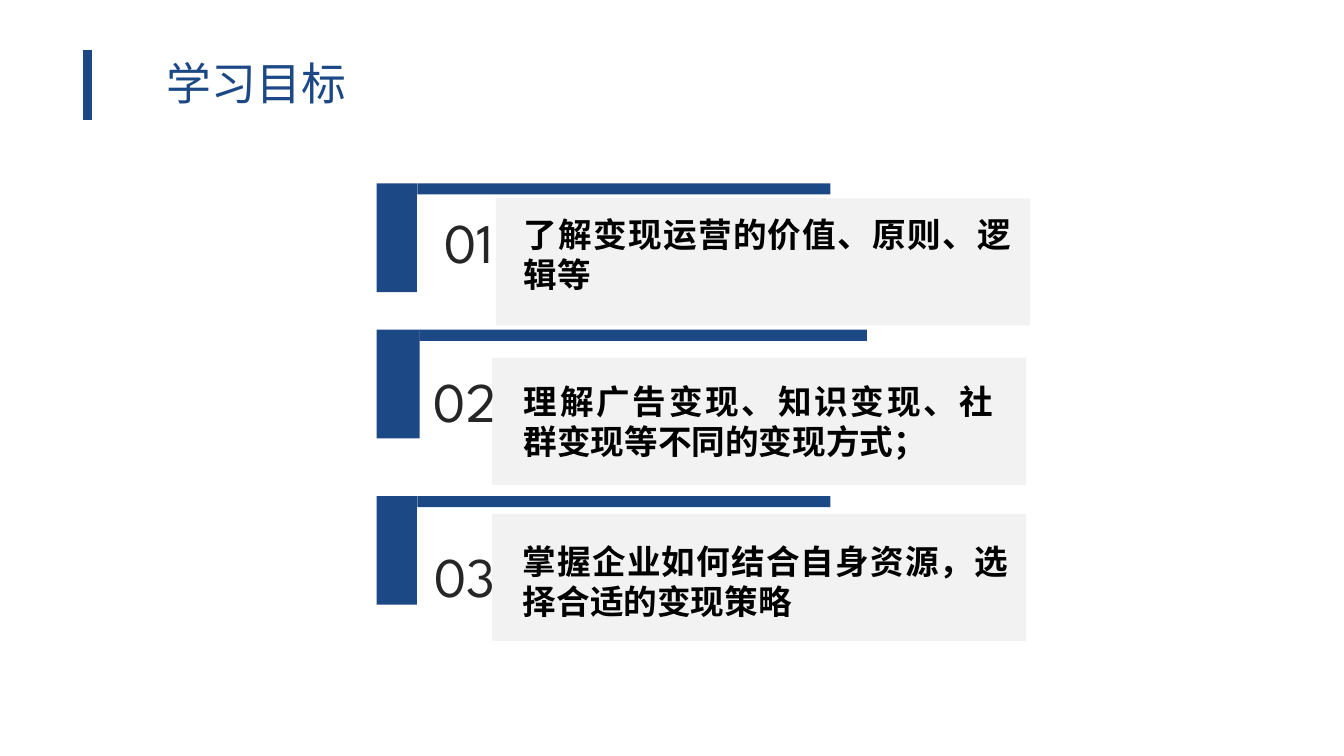
from dataclasses import dataclass

from lxml import etree
from pptx import Presentation
from pptx import util as u
from pptx.dml import color
from pptx.enum import shapes, text
from pptx.oxml import ns

COLORS = {"blue": "1C4885", "panel": "F2F2F2", "number": "262626", "black": "000000"}
CHINESE_FONT = "Noto Sans CJK SC"
POST_LEFT = 9.49
POST_HEIGHT = 2.74
BAR_HEIGHT = 0.28
PANEL_SIZE = (13.46, 3.2)
NUMBER_SIZE = (2.87, 1.96)
GOAL_HEIGHT = 2.31


@dataclass
class Style:
    size: int
    font: str
    color: str
    align: text.PP_ALIGN
    bold: bool = False


@dataclass
class Goal:
    wording: str
    top: float
    post_width: float
    bar_left: float
    bar_width: float
    panel: tuple[float, float]
    number: tuple[float, float]
    body: tuple[float, float]
    body_width: float


TITLE = Style(32, CHINESE_FONT, "blue", text.PP_ALIGN.CENTER)
NUMBER = Style(40, "League Spartan", "number", text.PP_ALIGN.CENTER)
BODY = Style(24, "Calibri", "black", text.PP_ALIGN.JUSTIFY, True)

GOALS = [
    Goal("了解变现运营的价值、原则、逻辑等", 4.62, 1.02, 10.52, 10.41,
         (12.5, 5), (10.39, 5.11), (12.95, 5.26), 12.78),
    Goal("理解广告变现、知识变现、社群变现等不同的变现方式；", 8.31, 1.09, 10.57, 11.28,
         (12.4, 9.02), (10.29, 9.12), (12.95, 9.47), 12.34),
    Goal("掌握企业如何结合自身资源，选择合适的变现策略", 12.5, 1.02, 10.52, 10.41,
         (12.4, 12.95), (10.29, 13.51), (12.93, 13.51), 12.73),
]


def rgb(name: str) -> color.RGBColor:
    return color.RGBColor.from_string(COLORS[name])


def add_block(page, left: float, top: float, width: float, height: float, fill: str) -> None:
    block = page.shapes.add_shape(
        shapes.MSO_SHAPE.RECTANGLE, u.Cm(left), u.Cm(top), u.Cm(width), u.Cm(height))
    block.shadow.inherit = False
    block.fill.solid()
    block.fill.fore_color.rgb = rgb(fill)
    block.line.fill.background()


def add_text(page, wording: str, left: float, top: float, width: float, height: float,
             style: Style) -> None:
    box = page.shapes.add_textbox(u.Cm(left), u.Cm(top), u.Cm(width), u.Cm(height))
    frame = box.text_frame
    frame.word_wrap = True
    frame.auto_size = text.MSO_AUTO_SIZE.SHAPE_TO_FIT_TEXT
    frame.text = wording
    para = frame.paragraphs[0]
    para.alignment = style.align
    span = para.runs[0]
    span.font.size = u.Pt(style.size)
    span.font.bold = style.bold
    span.font.color.rgb = rgb(style.color)
    span.font.name = style.font
    properties = span.font._element
    etree.SubElement(properties, ns.qn("a:ea"), typeface=CHINESE_FONT)


def add_title(page) -> None:
    add_text(page, "学习目标", 2.51, 1.27, 7.9, 1.63, TITLE)
    mark = page.shapes.add_connector(
        shapes.MSO_CONNECTOR.STRAIGHT, u.Cm(2.21), u.Cm(1.27), u.Cm(2.21), u.Cm(3.02))
    mark.line.color.rgb = rgb("blue")
    mark.line.width = u.Pt(6)
    etree.SubElement(mark._element.spPr, ns.qn("a:effectLst"))


def add_goal(page, index: int, goal: Goal) -> None:
    add_block(page, POST_LEFT, goal.top, goal.post_width, POST_HEIGHT, "blue")
    add_block(page, goal.bar_left, goal.top, goal.bar_width, BAR_HEIGHT, "blue")
    add_block(page, *goal.panel, *PANEL_SIZE, "panel")
    add_text(page, f"{index:02d}", *goal.number, *NUMBER_SIZE, NUMBER)
    add_text(page, goal.wording, *goal.body, goal.body_width, GOAL_HEIGHT, BODY)


def main() -> None:
    deck = Presentation()
    deck.slide_width, deck.slide_height = u.Cm(33.87), u.Cm(19.05)
    page = deck.slides.add_slide(deck.slide_layouts[6])
    add_title(page)
    for index, goal in enumerate(GOALS, start=1):
        add_goal(page, index, goal)
    deck.save("out.pptx")


if __name__ == "__main__":
    main()
